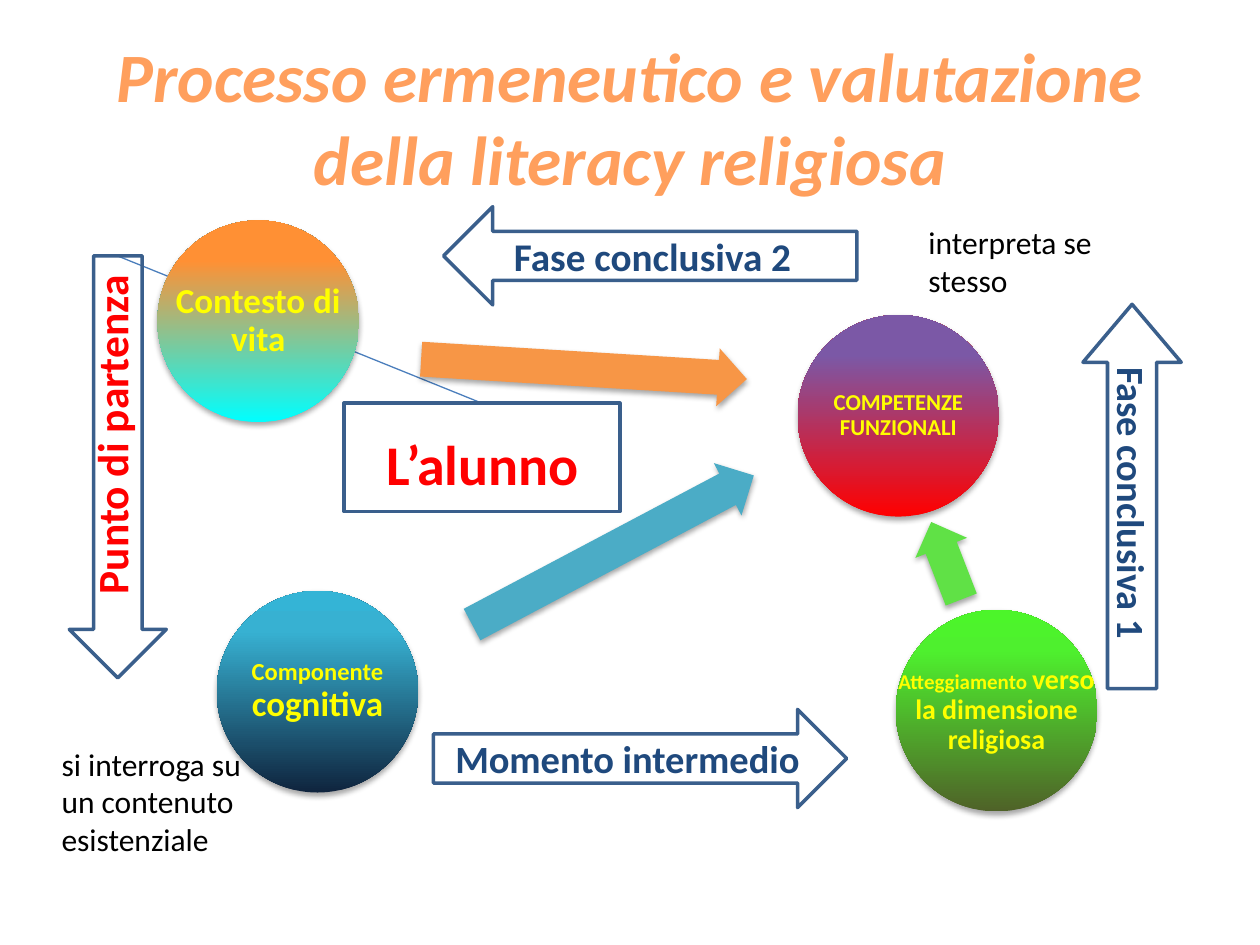
import pptx
import pptx.dml.color
import pptx.enum.shapes
import pptx.enum.text
import pptx.oxml
import pptx.oxml.ns
import pptx.util

RGB = pptx.dml.color.RGBColor
SHAPE = pptx.enum.shapes.MSO_SHAPE
ANCHOR = pptx.enum.text.MSO_ANCHOR
ALIGN = pptx.enum.text.PP_ALIGN
NS = pptx.oxml.ns.nsdecls("a")

TITLE = RGB(0xFF, 0x9F, 0x5D)
YELLOW = RGB(0xFF, 0xFF, 0x00)
RED = RGB(0xFF, 0x00, 0x00)
NAVY = RGB(0x1F, 0x49, 0x7D)
BLACK = RGB(0x00, 0x00, 0x00)
OUTLINE = RGB(0x3A, 0x5F, 0x8C)
LINK = RGB(0x4B, 0x7E, 0xBC)
TEAL = RGB(0x4B, 0xAC, 0xC6)
GREEN = RGB(0x60, 0xE1, 0x46)
ORANGE = RGB(0xF7, 0x96, 0x46)
PURPLE_FADE = (RED, RGB(0x7B, 0x58, 0xA6), RGB(0x7C, 0x57, 0xA8))
BLUE_FADE = (RGB(0x0F, 0x24, 0x3E), RGB(0x37, 0xB1, 0xD2), RGB(0x34, 0xB4, 0xD6))
GREEN_FADE = (RGB(0x4F, 0x62, 0x28), RGB(0x4E, 0xF0, 0x2E), RGB(0x4C, 0xF5, 0x2A))
SUNSET_FADE = (RGB(0x00, 0xFF, 0xFF), RGB(0xFF, 0x90, 0x34), RGB(0xFF, 0x91, 0x36))

COLUMNS, ROWS = 100, 75
CELL = pptx.util.Inches(10) // COLUMNS
DIAMETER = 16


def cells(*counts):
    return [round(n * CELL) for n in counts]


def add_text(slide, box, runs, color, align=ALIGN.LEFT, anchor=ANCHOR.TOP,
             bold=True, italic=False, rotation=0, spacing=None, inset=None):
    sp = slide.shapes.add_textbox(*cells(*box))
    sp.rotation = rotation
    tf = sp.text_frame
    tf.word_wrap = True
    tf.vertical_anchor = anchor
    if inset is not None:
        tf.margin_left = tf.margin_right = pptx.util.Inches(inset)
        tf.margin_top = tf.margin_bottom = pptx.util.Inches(inset)
    p = tf.paragraphs[0]
    p.alignment = align
    p.line_spacing = spacing
    p.font.name = "Calibri"
    p.font.bold = bold
    p.font.italic = italic
    p.font.color.rgb = color
    if len(runs) == 1:
        p.font.size = pptx.util.Pt(runs[0][1])
    for text, size in runs:
        r = p.add_run()
        r.text = text
        if len(runs) > 1:
            r.font.size = pptx.util.Pt(size)


def add_soft_shadow(sp):
    sp._element.spPr.append(pptx.oxml.parse_xml(
        f'<a:effectLst {NS}><a:outerShdw blurRad="40000" dist="23000" dir="5400000" '
        'rotWithShape="0"><a:srgbClr val="000000"><a:alpha val="35000"/></a:srgbClr>'
        '</a:outerShdw></a:effectLst>'))


def add_circle(slide, left, top, fade, runs, inset=0.02):
    box = (left, top, DIAMETER, DIAMETER)
    sp = slide.shapes.add_shape(SHAPE.OVAL, *cells(*box))
    stops = "".join(f'<a:gs pos="{pos}"><a:srgbClr val="{color}"/></a:gs>'
                    for pos, color in zip((0, 80000, 100000), fade))
    sp._element.spPr.append(pptx.oxml.parse_xml(
        f'<a:gradFill {NS} rotWithShape="1"><a:gsLst>{stops}</a:gsLst>'
        '<a:lin ang="16200000" scaled="0"/></a:gradFill>'))
    sp.line.fill.background()
    add_soft_shadow(sp)
    add_text(slide, box, runs, YELLOW, ALIGN.CENTER, ANCHOR.MIDDLE,
             spacing=0.9, inset=inset)


def add_solid_arrow(slide, box, rotation, color):
    sp = slide.shapes.add_shape(SHAPE.RIGHT_ARROW, *cells(*box))
    sp.rotation = rotation
    sp.adjustments[0] = 0.6
    sp.fill.solid()
    sp.fill.fore_color.rgb = color
    sp.line.fill.background()
    add_soft_shadow(sp)


def add_outline(slide, kind, box, rotation=0):
    sp = slide.shapes.add_shape(kind, *cells(*box))
    sp.rotation = rotation
    sp.shadow.inherit = False
    sp.fill.background()
    sp.line.color.rgb = OUTLINE
    sp.line.width = pptx.util.Pt(2)
    return sp


def add_link(slide, start, end):
    cxn = slide.shapes.add_connector(
        pptx.enum.shapes.MSO_CONNECTOR.STRAIGHT, *cells(*start, *end))
    cxn.line.color.rgb = LINK
    cxn.line.width = pptx.util.Pt(0.75)
    cxn._element.spPr.append(pptx.oxml.parse_xml(f"<a:effectLst {NS}/>"))
    return cxn


def main():
    prs = pptx.Presentation()
    prs.slide_width, prs.slide_height = cells(COLUMNS, ROWS)
    slide = prs.slides.add_slide(prs.slide_layouts[6])

    link = add_link(slide, (9.3, 20.3), (38.3, 32))
    add_text(slide, (5, 3, 90, 12.5),
             [("Processo ermeneutico e valutazione della literacy religiosa", 39.6)],
             TITLE, ALIGN.CENTER, ANCHOR.MIDDLE, italic=True)

    add_circle(slide, 63.3, 25, PURPLE_FADE, [("COMPETENZE FUNZIONALI", 13)])
    add_solid_arrow(slide, (36, 41.3, 25.3, 4.7), 332.1, TEAL)
    add_circle(slide, 17.2, 46.9, BLUE_FADE, [("Componente ", 14), ("cognitiva", 20)])
    add_solid_arrow(slide, (71.8, 42.3, 6.6, 4.4), 248.8, GREEN)
    add_circle(slide, 71.1, 48.4, GREEN_FADE,
               [("Atteggiamento ", 12), ("verso la dimensione religiosa", 16)])
    add_solid_arrow(slide, (33.4, 27, 25.9, 4.6), 3.5, ORANGE)
    add_circle(slide, 12.5, 17.5, SUNSET_FADE, [("Contesto di vita", 20)], inset=0.03)

    add_text(slide, (-4.5, 31.9, 27.8, 4.7), [("Punto di partenza", 24.8)], RED,
             rotation=270, spacing=0.8)
    add_text(slide, (3.9, 58.6, 18, 10.9),
             [("si interroga su un contenuto esistenziale", 18)], BLACK, bold=False)
    add_text(slide, (39.8, 18.7, 24.2, 4.7), [("Fase conclusiva 2", 22.4)], NAVY,
             spacing=0.8)
    add_text(slide, (33.6, 57.8, 32.4, 4.7), [("Momento intermedio", 22)], NAVY,
             ALIGN.CENTER, ANCHOR.BOTTOM)
    add_outline(slide, SHAPE.RIGHT_ARROW, (34.4, 56.3, 32.8, 7.8))
    add_outline(slide, SHAPE.RIGHT_ARROW, (-7.4, 33.2, 33.5, 7.7), 90)
    add_text(slide, (29.7, 33.6, 18, 6.3), [("L’alunno", 32)], RED,
             anchor=ANCHOR.BOTTOM)
    pupil = add_outline(slide, SHAPE.RECTANGLE, (27.3, 32, 21.9, 8.6))
    link.end_connect(pupil, 0)
    final_arrow = add_outline(slide, SHAPE.RIGHT_ARROW, (74.6, 35.5, 30.5, 7.8), 270)
    final_arrow.adjustments[1] = 0.59
    add_text(slide, (76.6, 39.1, 26.6, 4.7), [("Fase conclusiva 1", 22)], NAVY,
             anchor=ANCHOR.BOTTOM, rotation=90)
    add_outline(slide, SHAPE.RIGHT_ARROW, (35.2, 16.4, 32.8, 7.8), 180)
    add_text(slide, (72.7, 17.2, 18.8, 7.8), [("interpreta se stesso", 18)], BLACK,
             bold=False)

    prs.save("out.pptx")


if __name__ == "__main__":
    main()
